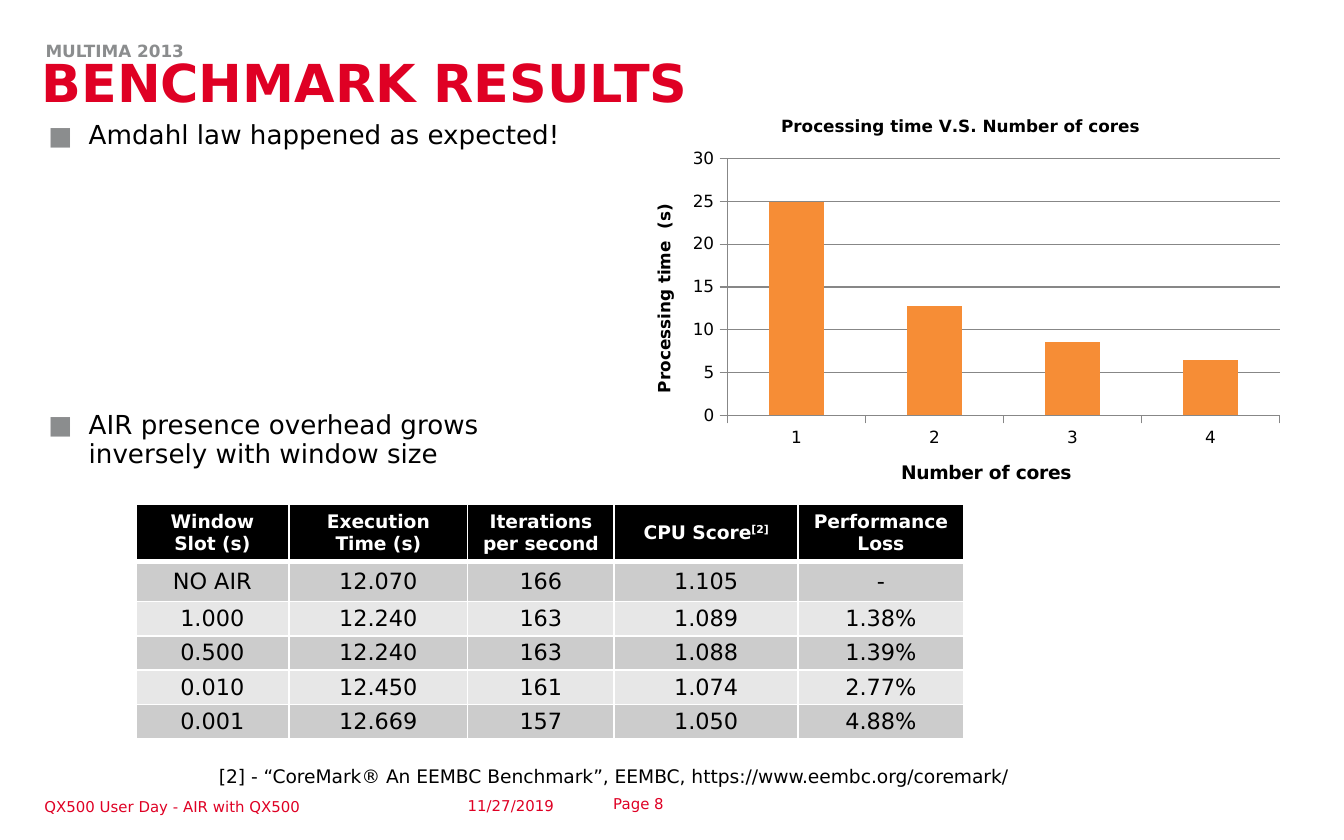
from lxml import etree
from pptx import Presentation
from pptx.chart.data import CategoryChartData
from pptx.dml.color import RGBColor
from pptx.enum.chart import XL_CHART_TYPE, XL_TICK_MARK
from pptx.enum.text import MSO_ANCHOR, MSO_AUTO_SIZE, PP_ALIGN
from pptx.oxml import parse_xml
from pptx.oxml.ns import nsdecls, qn
from pptx.util import Inches, Pt

# Content
FONT = "DejaVu Sans"
COLORS = {"red": "DF0024", "gray": "8B8D8E", "black": "000000", "white": "FFFFFF",
          "dark": "CCCCCC", "light": "E7E7E7", "orange": "F68D36", "axis": "878787"}
TITLE = "BENCHMARK RESULTS"
POINTS = [("Amdahl law happened as expected!", 0),
          ("AIR presence overhead grows\vinversely with window size", 139)]
# text, box, size, colour, bold, align, anchor, inset (x, y), line spacing
LEFT, RIGHT = PP_ALIGN.LEFT, PP_ALIGN.RIGHT
TOP, LOW = MSO_ANCHOR.TOP, MSO_ANCHOR.BOTTOM
NOTES = [
    ("MULTIMA 2013", (0.24, 0.27, 2.82, 0.22), 9, "gray", True, LEFT, TOP, (0.1, 0.05), 0.9),
    ("Page 8", (4.28, 5.82, 0.66, 0.23), 8, "red", False, RIGHT, LOW, (0, 0), 0.9),
    ("QX500 User Day - AIR with QX500", (0.33, 5.81, 2.75, 0.26), 8, "red", False,
     LEFT, LOW, (0, 0), 0.9),
    ("11/27/2019", (3.48, 5.8, 0.8, 0.26), 8, "red", False, LEFT, LOW, (0, 0), 0.9),
    ("[2] - “CoreMark® An EEMBC Benchmark”, EEMBC, https://www.eembc.org/coremark/",
     (1.53, 5.64, 6.27, 0.27), 10, "black", False, LEFT, TOP, (0.1, 0.05), 1.0),
]
ROWS = [
    ("Window Slot (s)", "Execution Time (s)", "Iterations per second", "CPU Score",
     "Performance Loss"),
    ("NO AIR", "12.070", "166", "1.105", "-"),
    ("1.000", "12.240", "163", "1.089", "1.38%"),
    ("0.500", "12.240", "163", "1.088", "1.39%"),
    ("0.010", "12.450", "161", "1.074", "2.77%"),
    ("0.001", "12.669", "157", "1.050", "4.88%"),
]
WIDTHS = [1.14, 1.33, 1.09, 1.37, 1.23]
HEIGHTS = [0.43, 0.28] + [0.24] * 4
CITE = (0, 3, "[2]")
TIMES = {"1": 25, "2": 12.8, "3": 8.6, "4": 6.5}
PLOT = {"x": 0.15, "y": 0.15, "w": 0.83, "h": 0.62}


def rgb(name):
    return RGBColor.from_string(COLORS[name])


def style(font, size, color="black", bold=False):
    font.name, font.size, font.bold = FONT, Pt(size), bold
    font.color.rgb = rgb(color)


def place(shape, box):
    shape.left, shape.top, shape.width, shape.height = map(Inches, box)


def inset(item, x, y):
    item.margin_left = item.margin_right = Inches(x)
    item.margin_top = item.margin_bottom = Inches(y)


def setup(shape, anchor=TOP, gap=(0, 0)):
    frame = shape.text_frame
    frame.word_wrap, frame.auto_size = True, MSO_AUTO_SIZE.NONE
    frame.vertical_anchor = anchor
    inset(frame, *gap)
    return frame


def bullet(para):
    props = para._p.get_or_add_pPr()
    props.set("marL", str(Inches(0.31)))
    props.set("indent", str(-Inches(0.31)))
    color = etree.SubElement(props, qn("a:buClr"))
    etree.SubElement(color, qn("a:srgbClr"), val=COLORS["gray"])
    etree.SubElement(props, qn("a:buSzPct"), val="150000")
    etree.SubElement(props, qn("a:buFont"), typeface=FONT)
    etree.SubElement(props, qn("a:buChar"), char="▪")


def border(cell, low):
    props = cell._tc.get_or_add_tcPr()
    for side, width in zip("LRTB", (1, 1, 1, low)):
        line = etree.SubElement(props, qn("a:ln" + side), w=str(Pt(width)))
        fill = etree.SubElement(line, qn("a:solidFill"))
        etree.SubElement(fill, qn("a:srgbClr"), val=COLORS["white"])


def caption(item, text, size):
    item.has_title = True
    title = item.chart_title if hasattr(item, "chart_title") else item.axis_title
    para = title.text_frame.paragraphs[0]
    para.text = text
    style(para.font, size, bold=True)


deck = Presentation()
deck.slide_width, deck.slide_height = Inches(10), Inches(6.25)
slide = deck.slides.add_slide(deck.slide_layouts[1])
title, body = slide.placeholders

# Title
place(title, (0.31, 0.41, 9.43, 0.39))
para = setup(title).paragraphs[0]
para.text, para.alignment, para.line_spacing = TITLE, LEFT, 0.95
style(para.font, 28, "red", True)

# Bullet list
place(body, (0.35, 0.9, 4.2, 2.75))
frame = setup(body)
for i, (text, before) in enumerate(POINTS):
    para = frame.add_paragraph() if i else frame.paragraphs[0]
    para.text, para.line_spacing, para.space_before = text, 0.95, Pt(before)
    bullet(para)
    style(para.font, 14)

# Section label, footer and reference
for text, box, size, color, bold, align, anchor, gap, pitch in NOTES:
    para = setup(slide.shapes.add_textbox(*map(Inches, box)), anchor, gap).paragraphs[0]
    para.text, para.alignment, para.line_spacing = text, align, pitch
    style(para.font, size, color, bold)

# Benchmark table
table = slide.shapes.add_table(
    len(ROWS), len(WIDTHS), Inches(1.01), Inches(3.75),
    Inches(sum(WIDTHS)), Inches(sum(HEIGHTS))).table
for col, width in zip(table.columns, WIDTHS):
    col.width = Inches(width)
for r, (row, height) in enumerate(zip(ROWS, HEIGHTS)):
    table.rows[r].height = Inches(height)
    head = r == 0
    for c, text in enumerate(row):
        cell = table.cell(r, c)
        border(cell, 3 if head else 1)
        cell.fill.solid()
        cell.fill.fore_color.rgb = rgb("black" if head else "dark" if r % 2 else "light")
        cell.vertical_anchor = MSO_ANCHOR.MIDDLE
        inset(cell, *((0.1, 0.05) if r < 2 else (0.03, 0.03)))
        para = cell.text_frame.paragraphs[0]
        para.text, para.alignment = text, PP_ALIGN.CENTER
        if (r, c) == CITE[:2]:
            run = para.add_run()
            run.text = CITE[2]
            run._r.get_or_add_rPr().set("baseline", "30000")
        style(para.font, 10 if head else 12, "white" if head else "black", head)

# Processing time chart
data = CategoryChartData()
data.categories = list(TIMES)
data.add_series("Series 1", list(TIMES.values()))
chart = slide.shapes.add_chart(
    XL_CHART_TYPE.COLUMN_CLUSTERED, *map(Inches, (4.67, 0.72, 4.95, 3.08)), data).chart
style(chart.font, 10)
chart.has_legend = False
caption(chart, "Processing time V.S. Number of cores", 9)
caption(chart.category_axis, "Number of cores", 10)
caption(chart.value_axis, "Processing time  (s)", 9)
for axis in (chart.category_axis, chart.value_axis):
    axis.major_tick_mark, axis.minor_tick_mark = XL_TICK_MARK.OUTSIDE, XL_TICK_MARK.NONE
    axis.format.line.color.rgb = rgb("axis")
    style(axis.tick_labels.font, 9)
scale = chart.value_axis
scale.minimum_scale, scale.maximum_scale, scale.major_unit = 0, 30, 5
scale.major_gridlines.format.line.color.rgb = rgb("axis")
plot = chart.plots[0]
plot.gap_width, plot.vary_by_categories = 150, False
fill = plot.series[0].format.fill
fill.solid()
fill.fore_color.rgb = rgb("orange")

# Inner plot area
area = chart._chartSpace.find(".//" + qn("c:plotArea"))
for old in area.findall(qn("c:layout")):
    area.remove(old)
modes = "".join(f'<c:{k}Mode val="edge"/>' for k in "xy")
sizes = "".join(f'<c:{k} val="{v}"/>' for k, v in PLOT.items())
area.insert(0, parse_xml(
    f'<c:layout {nsdecls("c")}><c:manualLayout><c:layoutTarget val="inner"/>'
    f'{modes}{sizes}</c:manualLayout></c:layout>'))

deck.save("out.pptx")
